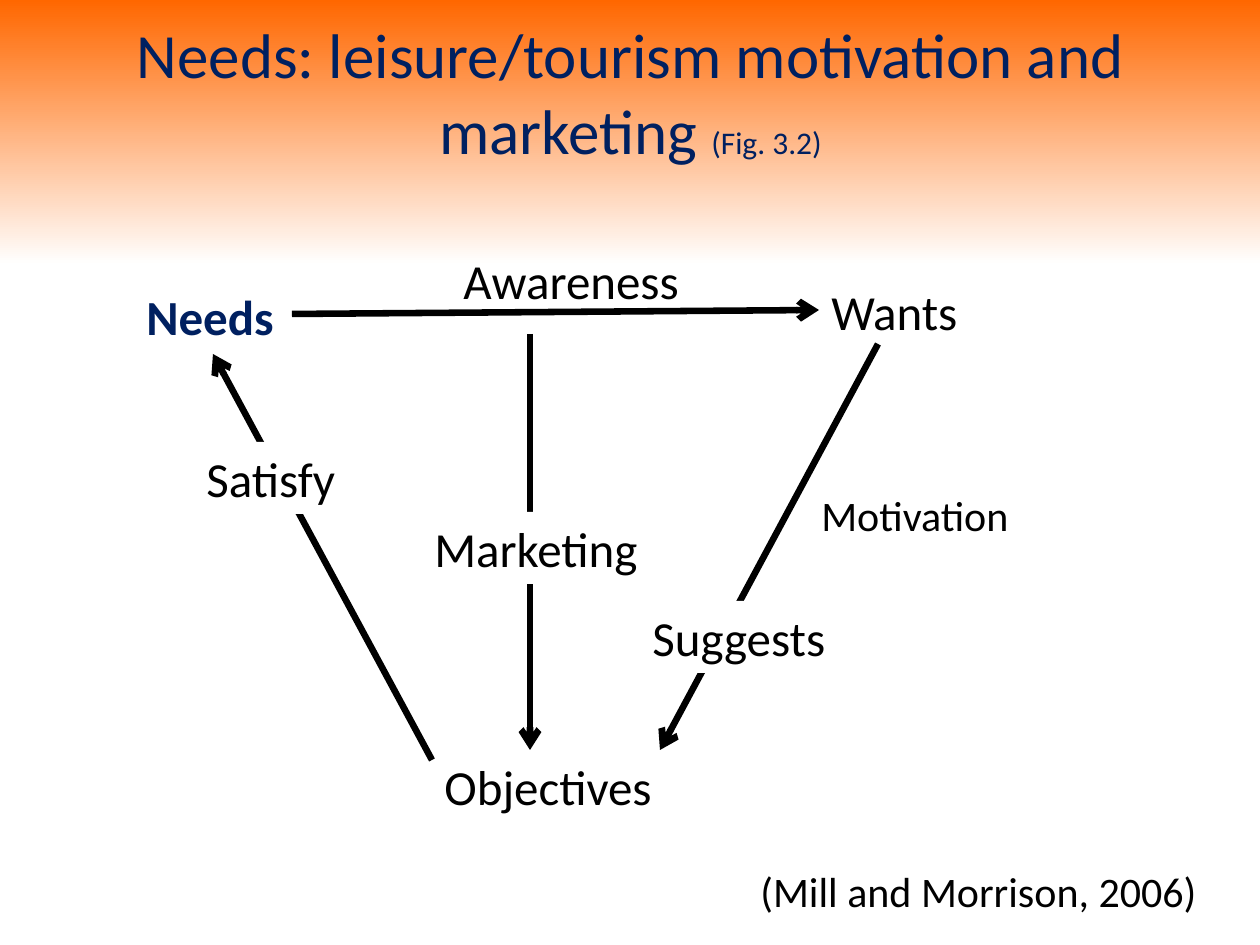
import pptx
import pptx.dml.color
import pptx.enum.shapes
import pptx.enum.text
import pptx.oxml
import pptx.oxml.ns
import pptx.util

EMU_PER_PX = 914400 / 126
BLACK, NAVY, WHITE, ORANGE = "000000", "002060", "FFFFFF", "FF6700"
LABEL_HEIGHT = 72


def px(length):
    return pptx.util.Emu(round(length * EMU_PER_PX))


def colour(hex_value):
    return pptx.dml.color.RGBColor.from_string(hex_value)


def set_values(target, values):
    for name, value in values.items():
        setattr(target, name, value)


def write_run(paragraph, wording, size, hex_value=BLACK, bold=False):
    run = paragraph.add_run()
    run.text = wording
    set_values(run.font, {"name": "Calibri", "size": pptx.util.Pt(size), "bold": bold})
    run.font.color.rgb = colour(hex_value)


def paint_background(slide):
    fill = slide.background.fill
    fill.gradient()
    fill.gradient_angle = 270
    for stop, (position, hex_value) in zip(fill.gradient_stops, ((0, ORANGE), (0.28, WHITE))):
        stop.position = position
        stop.color.rgb = colour(hex_value)


def write_title(slide):
    title = slide.shapes.title
    set_values(title, {"left": px(25), "top": px(38), "width": px(1211), "height": px(107)})
    set_values(title.text_frame, {
        "word_wrap": True,
        "auto_size": pptx.enum.text.MSO_AUTO_SIZE.NONE,
        "vertical_anchor": pptx.enum.text.MSO_ANCHOR.MIDDLE,
    })
    heading = title.text_frame.paragraphs[0]
    heading.alignment = pptx.enum.text.PP_ALIGN.CENTER
    write_run(heading, "Needs: leisure/tourism motivation and marketing ", 36, NAVY)
    write_run(heading, "(Fig. 3.2)", 18, NAVY)


def fill_label(label, wording, size, hex_value, bold):
    set_values(label.text_frame, {
        "word_wrap": True,
        "auto_size": pptx.enum.text.MSO_AUTO_SIZE.SHAPE_TO_FIT_TEXT,
        "vertical_anchor": pptx.enum.text.MSO_ANCHOR.TOP,
    })
    paragraph = label.text_frame.paragraphs[0]
    paragraph.alignment = pptx.enum.text.PP_ALIGN.LEFT
    write_run(paragraph, wording, size, hex_value, bold)


def add_label(slide, wording, left, top, width, height=LABEL_HEIGHT, size=28,
              hex_value=BLACK, bold=False):
    label = slide.shapes.add_textbox(px(left), px(top), px(width), px(height))
    fill_label(label, wording, size, hex_value, bold)


def add_arrow_label(slide, wording, left, top, width):
    label = slide.shapes.add_shape(
        pptx.enum.shapes.MSO_SHAPE.RECTANGLE, px(left), px(top), px(width), px(LABEL_HEIGHT))
    label.shadow.inherit = False
    label.fill.solid()
    label.fill.fore_color.rgb = colour(WHITE)
    label.line.fill.background()
    fill_label(label, wording, 28, BLACK, False)


def add_arrow(slide, start, end):
    arrow = slide.shapes.add_connector(
        pptx.enum.shapes.MSO_CONNECTOR.STRAIGHT, *map(px, start + end))
    arrow.line.width = pptx.util.Pt(3.75)
    arrow.line.color.rgb = colour(BLACK)
    head = pptx.oxml.parse_xml(
        f'<a:tailEnd {pptx.oxml.ns.nsdecls("a")} type="arrow"/>')
    arrow.line._get_or_add_ln().append(head)
    arrow._element.spPr.append(
        pptx.oxml.parse_xml(f'<a:effectLst {pptx.oxml.ns.nsdecls("a")}/>'))


def main():
    presentation = pptx.Presentation()
    set_values(presentation, {"slide_width": px(1260), "slide_height": px(945)})
    slide = presentation.slides.add_slide(presentation.slide_layouts[5])
    paint_background(slide)
    write_title(slide)

    add_label(slide, "Wants", 819, 275, 189)
    add_label(slide, "Needs", 134, 280, 189, hex_value=NAVY, bold=True)
    add_arrow(slide, (292, 314), (819, 310))
    add_label(slide, "Awareness", 451, 244, 258)
    add_label(slide, "Objectives", 432, 750, 258)

    add_arrow(slide, (878, 344), (660, 750))
    add_label(slide, "Motivation", 809, 483, 228, height=63, size=24)
    add_arrow_label(slide, "Suggests", 640, 601, 218)

    add_arrow(slide, (530, 334), (530, 750))
    add_arrow_label(slide, "Marketing", 422, 512, 248)

    add_arrow(slide, (432, 760), (213, 354))
    add_arrow_label(slide, "Satisfy", 194, 442, 189)

    add_label(slide, "(Mill and Morrison, 2006)", 748, 859, 466, height=63, size=24)
    presentation.save("out.pptx")


if __name__ == "__main__":
    main()
